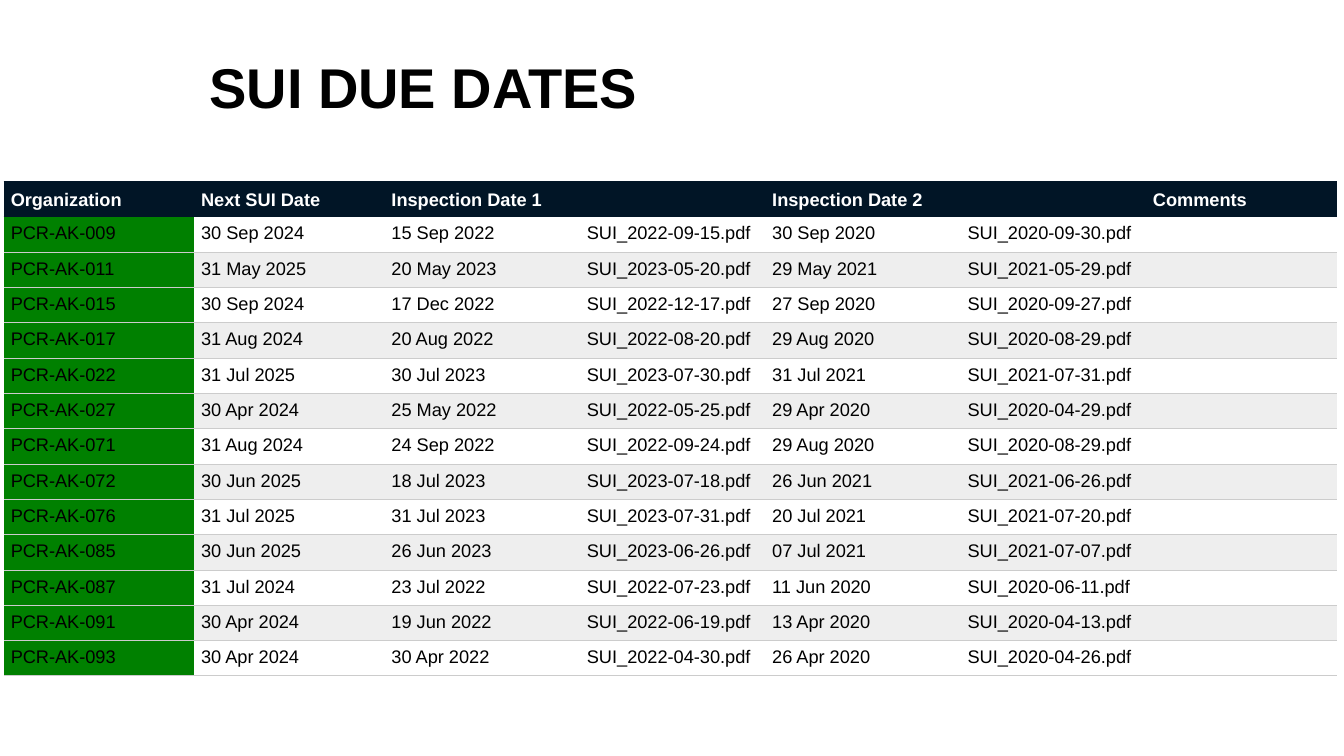
from lxml import etree
from pptx import Presentation
from pptx.dml.color import RGBColor
from pptx.enum import text
from pptx.oxml import ns
from pptx.util import Pt

BLACK = RGBColor(0x00, 0x00, 0x00)
WHITE = RGBColor(0xFF, 0xFF, 0xFF)
NAVY = RGBColor(0x01, 0x15, 0x26)
GREEN = RGBColor(0x00, 0x80, 0x00)
BAND = RGBColor(0xEE, 0xEE, 0xEE)
RULE = RGBColor(0xCC, 0xCC, 0xCC)

FONT = "Arial"
COLUMN_WIDTH = Pt(136)
ROW_HEIGHT = Pt(24.8)
PADDING = 4.8
FILE_INDENT = 3.6
FILE_COLUMNS = (3, 5)
MONTHS = "Jan Feb Mar Apr May Jun Jul Aug Sep Oct Nov Dec".split()

HEADINGS = ["Organization", "Next SUI Date", "Inspection Date 1", "",
            "Inspection Date 2", "", "Comments"]
INSPECTIONS = [
    ("PCR-AK-009", "30 Sep 2024", "15 Sep 2022", "30 Sep 2020"),
    ("PCR-AK-011", "31 May 2025", "20 May 2023", "29 May 2021"),
    ("PCR-AK-015", "30 Sep 2024", "17 Dec 2022", "27 Sep 2020"),
    ("PCR-AK-017", "31 Aug 2024", "20 Aug 2022", "29 Aug 2020"),
    ("PCR-AK-022", "31 Jul 2025", "30 Jul 2023", "31 Jul 2021"),
    ("PCR-AK-027", "30 Apr 2024", "25 May 2022", "29 Apr 2020"),
    ("PCR-AK-071", "31 Aug 2024", "24 Sep 2022", "29 Aug 2020"),
    ("PCR-AK-072", "30 Jun 2025", "18 Jul 2023", "26 Jun 2021"),
    ("PCR-AK-076", "31 Jul 2025", "31 Jul 2023", "20 Jul 2021"),
    ("PCR-AK-085", "30 Jun 2025", "26 Jun 2023", "07 Jul 2021"),
    ("PCR-AK-087", "31 Jul 2024", "23 Jul 2022", "11 Jun 2020"),
    ("PCR-AK-091", "30 Apr 2024", "19 Jun 2022", "13 Apr 2020"),
    ("PCR-AK-093", "30 Apr 2024", "30 Apr 2022", "26 Apr 2020"),
]


def report_name(date):
    """Return the report file name for an inspection date."""
    day, month, year = date.split()
    return f"SUI_{year}-{MONTHS.index(month) + 1:02}-{day}.pdf"


def write_text(frame, content, size=13, color=BLACK, bold=False, line_spacing=None):
    """Write one formatted paragraph into a text frame."""
    paragraph = frame.paragraphs[0]
    paragraph.line_spacing = line_spacing
    if not content:
        paragraph._p.get_or_add_endParaRPr().set("sz", str(size * 100))
        return
    run = paragraph.add_run()
    run.text = content
    run.font.name = FONT
    run.font.size = Pt(size)
    run.font.bold = bold
    run.font.color.rgb = color


def set_borders(cell, **colors):
    """Draw the named cell borders and clear the others."""
    properties = cell._tc.get_or_add_tcPr()
    for index, side in enumerate("LRTB"):
        line = etree.Element(ns.qn(f"a:ln{side}"), w=str(Pt(0.75)))
        color = colors.get(side)
        fill = etree.SubElement(line, ns.qn("a:solidFill" if color else "a:noFill"))
        if color:
            etree.SubElement(fill, ns.qn("a:srgbClr"), val=str(color))
        properties.insert(index, line)


def fill_cell(cell, content, fill, indent=0, anchor=text.MSO_ANCHOR.TOP, **style):
    """Set the fill, margins and text of a table cell."""
    cell.fill.solid()
    cell.fill.fore_color.rgb = fill
    cell.margin_left = Pt(PADDING + indent)
    cell.margin_right = cell.margin_top = cell.margin_bottom = Pt(PADDING)
    cell.vertical_anchor = anchor
    write_text(cell.text_frame, content, **style)


def add_title(slide, content):
    """Add the slide heading."""
    box = slide.shapes.add_textbox(Pt(142.6), Pt(31.7), Pt(761), Pt(66.2))
    box.text_frame.word_wrap = True
    box.text_frame.vertical_anchor = text.MSO_ANCHOR.MIDDLE
    write_text(box.text_frame, content, size=40, bold=True, line_spacing=0.9)


def add_inspection_table(slide):
    """Add the table of due dates and inspection reports."""
    row_count, column_count = len(INSPECTIONS) + 1, len(HEADINGS)
    table = slide.shapes.add_table(
        row_count, column_count, Pt(2.9), Pt(129.6),
        COLUMN_WIDTH * column_count, ROW_HEIGHT * row_count).table
    table.horz_banding = False
    for column in table.columns:
        column.width = COLUMN_WIDTH
    for row in table.rows:
        row.height = ROW_HEIGHT

    for column, heading in enumerate(HEADINGS):
        cell = table.cell(0, column)
        fill_cell(cell, heading, NAVY, anchor=text.MSO_ANCHOR.BOTTOM,
                  color=WHITE, bold=True)
        set_borders(cell, L=NAVY, R=NAVY, T=NAVY, B=NAVY)

    for row, (organization, due, first, second) in enumerate(INSPECTIONS, 1):
        values = [organization, due, first, report_name(first),
                  second, report_name(second), ""]
        band = WHITE if row % 2 else BAND
        for column, value in enumerate(values):
            cell = table.cell(row, column)
            fill_cell(cell, value, band if column else GREEN,
                      indent=FILE_INDENT if column in FILE_COLUMNS else 0)
            set_borders(cell, T=NAVY if row == 1 else RULE, B=RULE)


def main():
    """Build and save the slide."""
    presentation = Presentation()
    presentation.slide_width = Pt(960)
    presentation.slide_height = Pt(540)
    slide = presentation.slides.add_slide(presentation.slide_layouts[6])
    add_title(slide, "SUI DUE DATES")
    add_inspection_table(slide)
    presentation.save("out.pptx")


if __name__ == "__main__":
    main()
